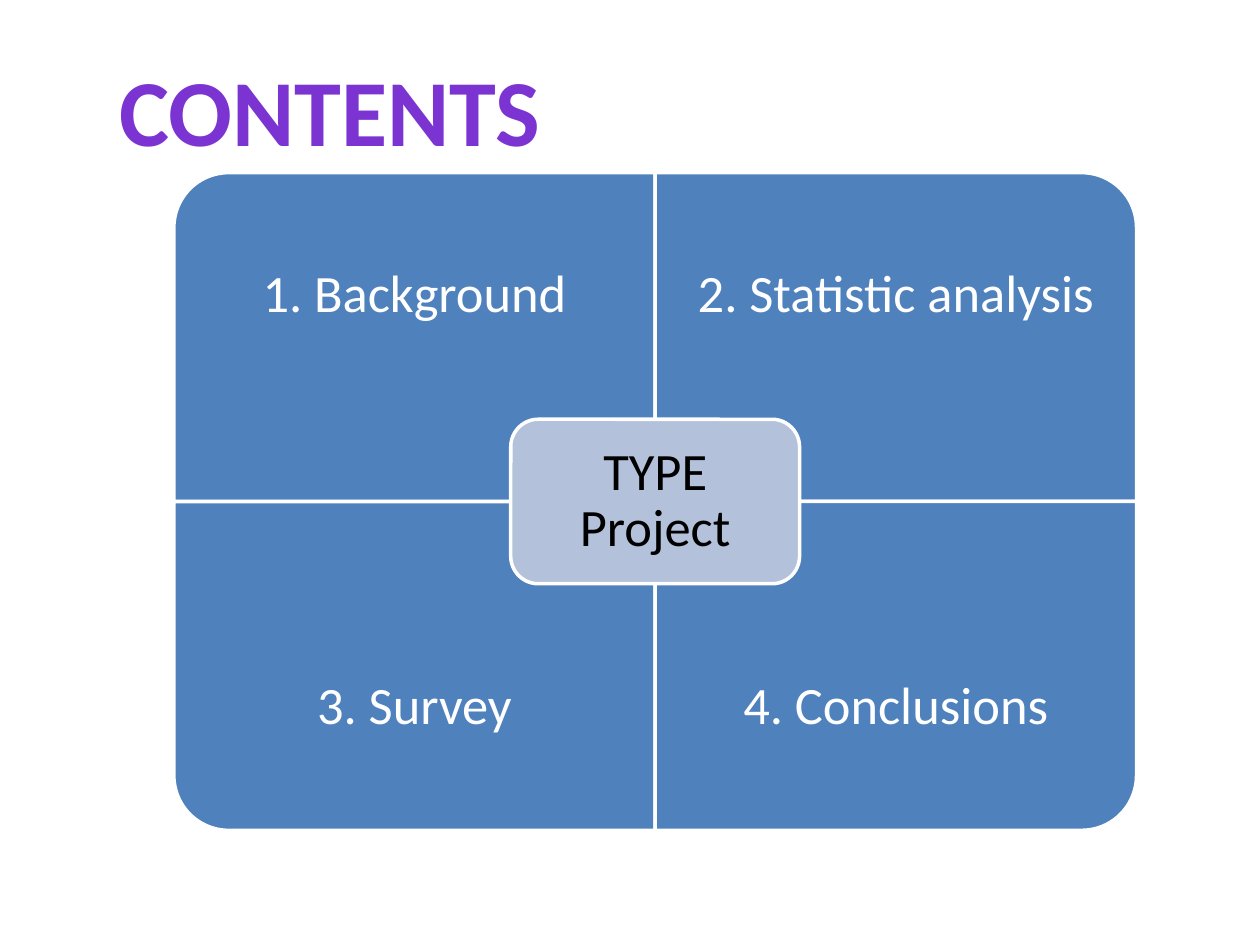
from collections import namedtuple

from pptx import Presentation
from pptx.dml.color import RGBColor
from pptx.enum.shapes import MSO_SHAPE
from pptx.enum.text import MSO_ANCHOR, MSO_AUTO_SIZE, PP_ALIGN
from pptx.util import Inches, Pt

Box = namedtuple("Box", "left top width height")

COLORS = {
    "title": "7B34D2",
    "quadrant": "4F81BD",
    "center": "B3C1DB",
    "white": "FFFFFF",
    "black": "000000",
}
FONT = "Calibri"
TOPICS = ["1. Background", "2. Statistic analysis", "3. Survey", "4. Conclusions"]
# Rotation that turns the rounded corner outwards, in reading order
ROTATIONS = [270, 0, 180, 90]


def color(name):
    return RGBColor.from_string(COLORS[name])


def inches(box):
    return [Inches(length) for length in box]


def format_text(frame, text, *, size, fill, bold=False, inset=0.1, spacing=0.9, wrap=True):
    frame.auto_size = MSO_AUTO_SIZE.NONE
    frame.word_wrap = wrap
    frame.vertical_anchor = MSO_ANCHOR.MIDDLE
    frame.margin_left = frame.margin_right = Inches(inset)
    frame.margin_top = frame.margin_bottom = Inches(inset)
    para = frame.paragraphs[0]
    para.alignment = PP_ALIGN.CENTER
    para.line_spacing = spacing
    span = para.add_run()
    span.text = text
    span.font.name = FONT
    span.font.size = Pt(size)
    span.font.bold = bold
    span.font.color.rgb = color(fill)


def add_panel(page, kind, box, fill, rotation=0):
    """Add a white-edged panel that covers the box after its rotation."""
    left, top, width, height = box
    if rotation % 180:
        left, top = left + (width - height) / 2, top + (height - width) / 2
        width, height = height, width
    panel = page.shapes.add_shape(kind, *inches(Box(left, top, width, height)))
    panel.rotation = rotation
    panel.shadow.inherit = False
    panel.fill.solid()
    panel.fill.fore_color.rgb = color(fill)
    panel.line.color.rgb = color("white")
    panel.line.width = Pt(2)


def add_label(page, box, text, **text_format):
    label = page.shapes.add_textbox(*inches(box))
    format_text(label.text_frame, text, size=30, **text_format)


def add_title(page, box, text):
    title = page.shapes.title
    title.left, title.top, title.width, title.height = inches(box)
    format_text(title.text_frame, text, size=54, fill="title", bold=True,
                spacing=1, wrap=False)


def add_matrix(page, box, topics, center_text):
    """Four quadrants with a centre panel; labels take the outer 3/4 of each."""
    width, height = box.width / 2, box.height / 2
    for index, (topic, rotation) in enumerate(zip(topics, ROTATIONS)):
        row, column = divmod(index, 2)
        left, top = box.left + column * width, box.top + row * height
        add_panel(page, MSO_SHAPE.ROUND_1_RECTANGLE, Box(left, top, width, height),
                  "quadrant", rotation)
        add_label(page, Box(left, top + row * height / 4, width, height * 3 / 4),
                  topic, fill="white", inset=0.23)

    center = Box(box.left + width * 0.7, box.top + height * 0.75, width * 0.6, height / 2)
    add_panel(page, MSO_SHAPE.ROUNDED_RECTANGLE, center, "center")
    pad = 0.06
    label_box = Box(center.left + pad, center.top + pad,
                    center.width - 2 * pad, center.height - 2 * pad)
    add_label(page, label_box, center_text, fill="black", inset=0.12)


def main():
    deck = Presentation()
    deck.slide_width, deck.slide_height = Inches(10), Inches(7.5)
    page = deck.slides.add_slide(deck.slide_layouts.get_by_name("Title Only"))
    add_title(page, Box(0.83, 0.36, 3.58, 1.01), "CONTENTS")
    add_matrix(page, Box(1.38, 1.37, 7.64, 5.22), TOPICS, "TYPE Project")
    deck.save("out.pptx")


if __name__ == "__main__":
    main()
